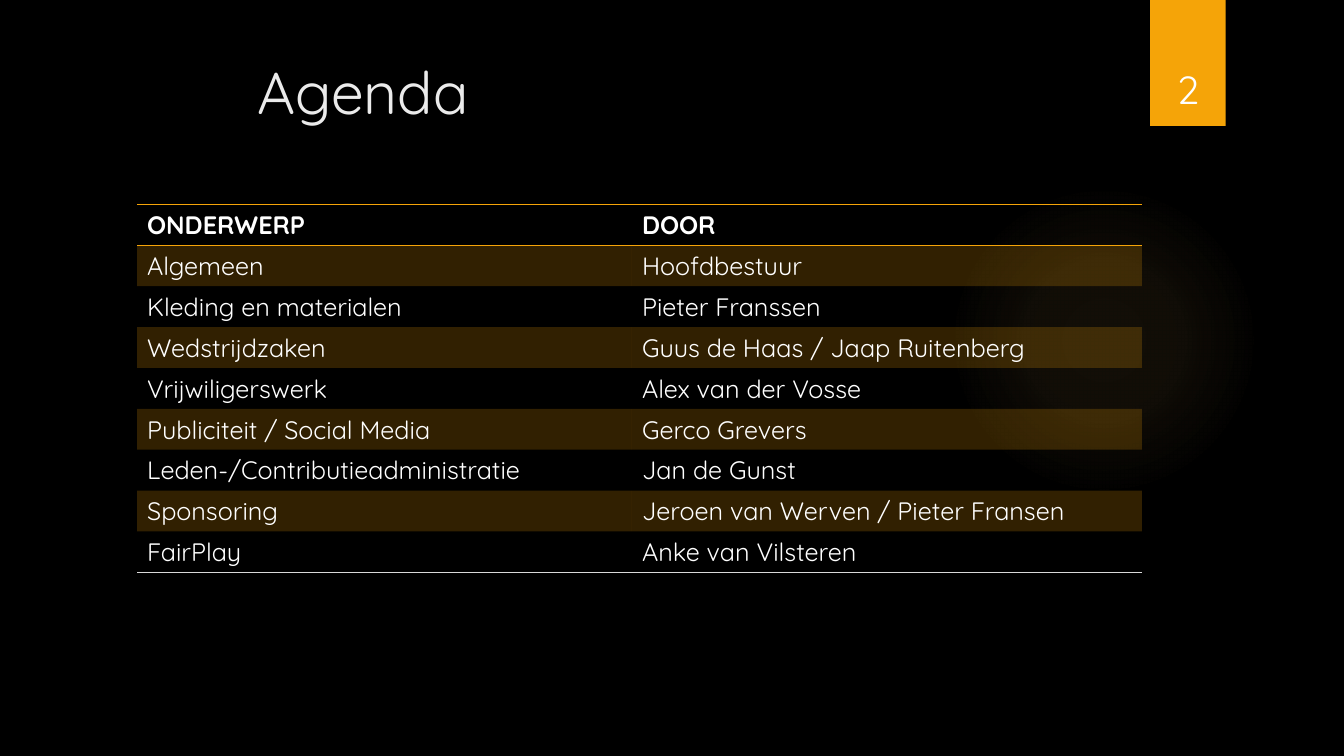
from lxml import etree
from pptx import Presentation
from pptx.dml.color import RGBColor
from pptx.enum import shapes, text
from pptx.oxml import ns
from pptx.util import Pt

BLACK = RGBColor(0x00, 0x00, 0x00)
WHITE = RGBColor(0xFF, 0xFF, 0xFF)
OFF_WHITE = RGBColor(0xEB, 0xEB, 0xEB)
LIGHT_GREY = RGBColor(0xD9, 0xD9, 0xD9)
AMBER = RGBColor(0xF5, 0xA4, 0x08)
GLOW = RGBColor(0xFA, 0xC9, 0x6A)

FONT = "Quicksand"
NO_STYLE = "{2D5ABB26-0587-4C30-8999-92F81FD0307C}"
COLUMN_WIDTHS = (353.5, 364.3)
ROW_HEIGHT = 29.2
AGENDA = [
    ("ONDERWERP", "DOOR"),
    ("Algemeen", "Hoofdbestuur"),
    ("Kleding en materialen", "Pieter Franssen"),
    ("Wedstrijdzaken", "Guus de Haas / Jaap Ruitenberg"),
    ("Vrijwiligerswerk", "Alex van der Vosse"),
    ("Publiciteit / Social Media", "Gerco Grevers"),
    ("Leden-/Contributieadministratie", "Jan de Gunst"),
    ("Sponsoring", "Jeroen van Werven / Pieter Fransen"),
    ("FairPlay", "Anke van Vilsteren"),
]


def add_element(parent, tag, **attributes):
    return etree.SubElement(parent, ns.qn(tag), attributes)


def write(frame, content, size=18, color=WHITE, bold=False,
          align=text.PP_ALIGN.LEFT, anchor=text.MSO_ANCHOR.TOP):
    frame.word_wrap = True
    frame.vertical_anchor = anchor
    para = frame.paragraphs[0]
    para.alignment = align
    span = para.add_run()
    span.text = content
    span.font.name = FONT
    span.font.size = Pt(size)
    span.font.bold = bold
    span.font.color.rgb = color


def add_plain_shape(page, kind, left, top, width, height):
    shape = page.shapes.add_shape(kind, Pt(left), Pt(top), Pt(width), Pt(height))
    shape.shadow.inherit = False
    shape.line.fill.background()
    return shape


def add_glow(page, left, top, diameter):
    """Add a faint disc that fades out from its centre."""
    disc = add_plain_shape(page, shapes.MSO_SHAPE.OVAL, left, top, diameter, diameter)
    disc.fill.gradient()
    gradient = disc.fill._xPr.find(ns.qn("a:gradFill"))
    for child in list(gradient):
        gradient.remove(child)
    stops = add_element(gradient, "a:gsLst")
    for position, opacity in ((0, 7), (36, 6), (69, 0)):
        stop = add_element(stops, "a:gs", pos=str(position * 1000))
        color = add_element(stop, "a:srgbClr", val=str(GLOW))
        add_element(color, "a:alpha", val=str(opacity * 1000))
    circle = add_element(gradient, "a:path", path="circle")
    add_element(circle, "a:fillToRect", l="50000", t="50000", r="50000", b="50000")


def add_number_tab(page, left, top, width, height, number):
    tab = add_plain_shape(page, shapes.MSO_SHAPE.RECTANGLE, left, top, width, height)
    tab.fill.solid()
    tab.fill.fore_color.rgb = AMBER
    box = page.shapes.add_textbox(Pt(left - 6), Pt(top + 23), Pt(width + 12), Pt(60.5))
    write(box.text_frame, number, size=28, align=text.PP_ALIGN.CENTER,
          anchor=text.MSO_ANCHOR.BOTTOM)


def place_title(page, left, top, width, height, content):
    title = page.shapes.title
    title.left, title.top = Pt(left), Pt(top)
    title.width, title.height = Pt(width), Pt(height)
    title.text_frame.auto_size = text.MSO_AUTO_SIZE.NONE
    write(title.text_frame, content, size=42, color=OFF_WHITE)


def fill_cell(cell, shaded):
    if not shaded:
        cell.fill.background()
        return
    cell.fill.solid()
    cell.fill.fore_color.rgb = AMBER
    color = cell._tc.tcPr.find(".//" + ns.qn("a:srgbClr"))
    add_element(color, "a:alpha", val="20000")


def add_borders(cell, borders):
    """Draw 1 pt borders, given as (tag, colour) pairs, ahead of the cell's fill."""
    properties = cell._tc.get_or_add_tcPr()
    for index, (tag, color) in enumerate(borders):
        line = etree.Element(ns.qn(tag), w=str(Pt(1)))
        add_element(add_element(line, "a:solidFill"), "a:srgbClr", val=str(color))
        properties.insert(index, line)


def add_agenda_table(page, left, top, rows):
    frame = page.shapes.add_table(len(rows), len(COLUMN_WIDTHS), Pt(left), Pt(top),
                                  Pt(sum(COLUMN_WIDTHS)), Pt(ROW_HEIGHT * len(rows)))
    table = frame.table
    table._tbl.tblPr.find(ns.qn("a:tableStyleId")).text = NO_STYLE
    for column, width in zip(table.columns, COLUMN_WIDTHS):
        column.width = Pt(width)
    borders = {0: [("a:lnT", AMBER), ("a:lnB", AMBER)],
               len(rows) - 1: [("a:lnB", LIGHT_GREY)]}
    for r, entries in enumerate(rows):
        table.rows[r].height = Pt(ROW_HEIGHT)
        for c, entry in enumerate(entries):
            cell = table.cell(r, c)
            write(cell.text_frame, entry, bold=r == 0)
            fill_cell(cell, shaded=r % 2 == 1)
            add_borders(cell, borders.get(r, []))


def build_agenda_slide(deck):
    page = deck.slides.add_slide(deck.slide_layouts[5])
    page.background.fill.solid()
    page.background.fill.fore_color.rgb = BLACK
    add_glow(page, 677.5, 131.8, 221.8)
    add_number_tab(page, 821.5, 0, 54, 90, "2")
    place_title(page, 177, 36, 614, 110, "Agenda")
    add_agenda_table(page, 97.9, 146, AGENDA)


def main():
    deck = Presentation()
    deck.slide_width, deck.slide_height = Pt(960), Pt(540)
    build_agenda_slide(deck)
    deck.save("out.pptx")


if __name__ == "__main__":
    main()
